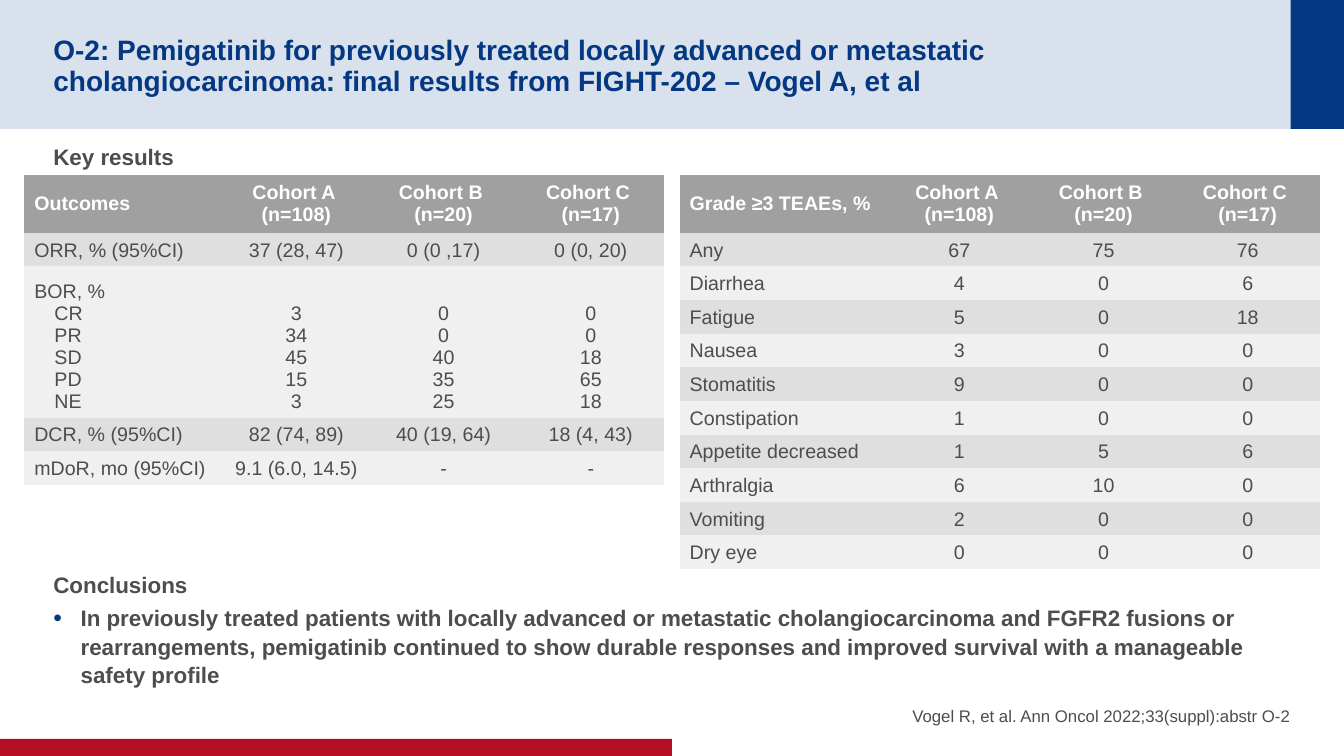
import pptx
import pptx.util
import pptx.dml.color
import pptx.enum.shapes
import pptx.enum.text
import pptx.oxml.ns
import lxml.etree

# Content
TITLE = ("O-2: Pemigatinib for previously treated locally advanced or metastatic "
         "cholangiocarcinoma: final results from FIGHT-202 – Vogel A, et al")
RESULTS_HEADING = "Key results"
CONCLUSIONS_HEADING = "Conclusions"
CONCLUSION = ("In previously treated patients with locally advanced or metastatic "
              "cholangiocarcinoma and FGFR2 fusions or rearrangements, pemigatinib "
              "continued to show durable responses and improved survival with a "
              "manageable safety profile")
CITATION = "Vogel R, et al. Ann Oncol 2022;33(suppl):abstr O-2"
COHORTS = ["Cohort A \n(n=108)", "Cohort B \n(n=20)", "Cohort C \n(n=17)"]
OUTCOMES = [
    ["Outcomes", *COHORTS],
    ["ORR, % (95%CI)", "37 (28, 47)", "0 (0 ,17)", "0 (0, 20)"],
    ["BOR, %\nCR\nPR\nSD\nPD\nNE", "3\n34\n45\n15\n3", "0\n0\n40\n35\n25", "0\n0\n18\n65\n18"],
    ["DCR, % (95%CI)", "82 (74, 89)", "40 (19, 64)", "18 (4, 43)"],
    ["mDoR, mo (95%CI)", "9.1 (6.0, 14.5)", "-", "-"],
]
ADVERSE_EVENTS = [
    ["Grade ≥3 TEAEs, %", *COHORTS],
    ["Any", "67", "75", "76"],
    ["Diarrhea", "4", "0", "6"],
    ["Fatigue", "5", "0", "18"],
    ["Nausea", "3", "0", "0"],
    ["Stomatitis", "9", "0", "0"],
    ["Constipation", "1", "0", "0"],
    ["Appetite decreased", "1", "5", "6"],
    ["Arthralgia", "6", "10", "0"],
    ["Vomiting", "2", "0", "0"],
    ["Dry eye", "0", "0", "0"],
]

# Look and layout, in inches
BLUE, PALE_BLUE, RED = "043882", "D9E1EC", "B60D27"
GREY, WHITE, HEADER_FILL, BANDS = "4D4D4D", "FFFFFF", "A0A0A0", ("F0F0F0", "DFDFDF")
WIDTH, HEIGHT = 13.33, 7.5
BAND_HEIGHT, MARGIN = 1.28, 0.53
BODY_WIDTH = WIDTH - 2 * MARGIN
TABLE_TOP, TABLE_WIDTH = 1.74, 6.35
LINE, CELL_PADDING = 0.22, 0.1

Inches, Pt = pptx.util.Inches, pptx.util.Pt
ALIGN, ANCHOR = pptx.enum.text.PP_ALIGN, pptx.enum.text.MSO_ANCHOR


def color(hex_code):
    return pptx.dml.color.RGBColor.from_string(hex_code)


def write(frame, text, size=16, ink=GREY, bold=False, align=ALIGN.LEFT,
          spacing=None, after=0, indent=0):
    """Write one paragraph per line; indent applies from the second line on."""
    frame.text = text
    for index, paragraph in enumerate(frame.paragraphs):
        paragraph.alignment = align
        paragraph.space_after = Pt(after)
        if spacing:
            paragraph.line_spacing = spacing
        if indent and index:
            paragraph._p.get_or_add_pPr().set("marL", str(Inches(indent)))
        font = paragraph.runs[0].font
        font.name, font.size, font.bold = "Arial", Pt(size), bold
        font.color.rgb = color(ink)


def add_text(slide, box, text, anchor=ANCHOR.TOP, padding=(0.05, 0.05), **look):
    frame = slide.shapes.add_textbox(*map(Inches, box)).text_frame
    frame.word_wrap = True
    frame.vertical_anchor = anchor
    frame.margin_left = frame.margin_right = 0
    frame.margin_top, frame.margin_bottom = map(Inches, padding)
    write(frame, text, **look)
    return frame


def add_bullet(paragraph):
    properties = paragraph._p.get_or_add_pPr()
    properties.set("marL", str(Inches(0.27)))
    properties.set("indent", str(-Inches(0.27)))
    qn = pptx.oxml.ns.qn
    bullet_color = lxml.etree.SubElement(properties, qn("a:buClr"))
    lxml.etree.SubElement(bullet_color, qn("a:srgbClr"), val=BLUE)
    lxml.etree.SubElement(properties, qn("a:buSzPct"), val="110000")
    lxml.etree.SubElement(properties, qn("a:buFont"), typeface="Arial")
    lxml.etree.SubElement(properties, qn("a:buChar"), char="•")


def add_block(slide, box, fill):
    block = slide.shapes.add_shape(pptx.enum.shapes.MSO_SHAPE.RECTANGLE, *map(Inches, box))
    block.shadow.inherit = False
    block.fill.solid()
    block.fill.fore_color.rgb = color(fill)
    block.line.fill.background()


def add_results(slide, left, label_width, rows):
    line_counts = [max(text.count("\n") + 1 for text in row) for row in rows]
    heights = [count * LINE + CELL_PADDING for count in line_counts]
    table = slide.shapes.add_table(
        len(rows), len(rows[0]), Inches(left), Inches(TABLE_TOP),
        Inches(TABLE_WIDTH), Inches(sum(heights))).table
    table.horz_banding = False
    # "No Style, No Grid" keeps white cell borders away
    style = table._tbl.tblPr.find(pptx.oxml.ns.qn("a:tableStyleId"))
    style.text = "{2D5ABB26-0587-4C30-8999-92F81FD0307C}"

    cohort_width = (TABLE_WIDTH - label_width) / len(COHORTS)
    for column, width in zip(table.columns, [label_width] + [cohort_width] * len(COHORTS)):
        column.width = Inches(width)
    for r, row in enumerate(rows):
        table.rows[r].height = Inches(heights[r])
        header = r == 0
        for c, text in enumerate(row):
            cell = table.cell(r, c)
            cell.fill.solid()
            cell.fill.fore_color.rgb = color(HEADER_FILL if header else BANDS[r % 2])
            cell.vertical_anchor = ANCHOR.MIDDLE if header else ANCHOR.BOTTOM
            write(cell.text_frame, text, size=14, bold=header,
                  ink=WHITE if header else GREY,
                  align=ALIGN.CENTER if c else ALIGN.LEFT, indent=0 if c else 0.2)


def main():
    deck = pptx.Presentation()
    deck.slide_width, deck.slide_height = Inches(WIDTH), Inches(HEIGHT)
    slide = deck.slides.add_slide(deck.slide_layouts[6])

    # Title band and footer bar
    add_block(slide, (0, 0, WIDTH, BAND_HEIGHT), PALE_BLUE)
    add_block(slide, (WIDTH - MARGIN, 0, MARGIN, BAND_HEIGHT), BLUE)
    add_block(slide, (0, HEIGHT - 0.17, WIDTH / 2, 0.17), RED)
    add_text(slide, (MARGIN, 0.2, 12, 0.88), TITLE, anchor=ANCHOR.MIDDLE,
             padding=(0.05, 0), size=20, ink=BLUE, bold=True, spacing=0.9)

    # Key results
    add_text(slide, (MARGIN, 1.37, BODY_WIDTH, 0.36), RESULTS_HEADING, bold=True)
    add_results(slide, 0.24, 1.97, OUTCOMES)
    add_results(slide, 6.74, 2.06, ADVERSE_EVENTS)

    # Conclusions
    conclusions = add_text(slide, (MARGIN, 5.6, BODY_WIDTH, 1.25),
                           f"{CONCLUSIONS_HEADING}\n{CONCLUSION}",
                           bold=True, spacing=1.05, after=4)
    add_bullet(conclusions.paragraphs[1])

    # Citation
    add_text(slide, (WIDTH - MARGIN - 6.02, 6.67, 6.02, 0.53), CITATION,
             anchor=ANCHOR.BOTTOM, padding=(0, 0), size=12, align=ALIGN.RIGHT)
    deck.save("out.pptx")


if __name__ == "__main__":
    main()
